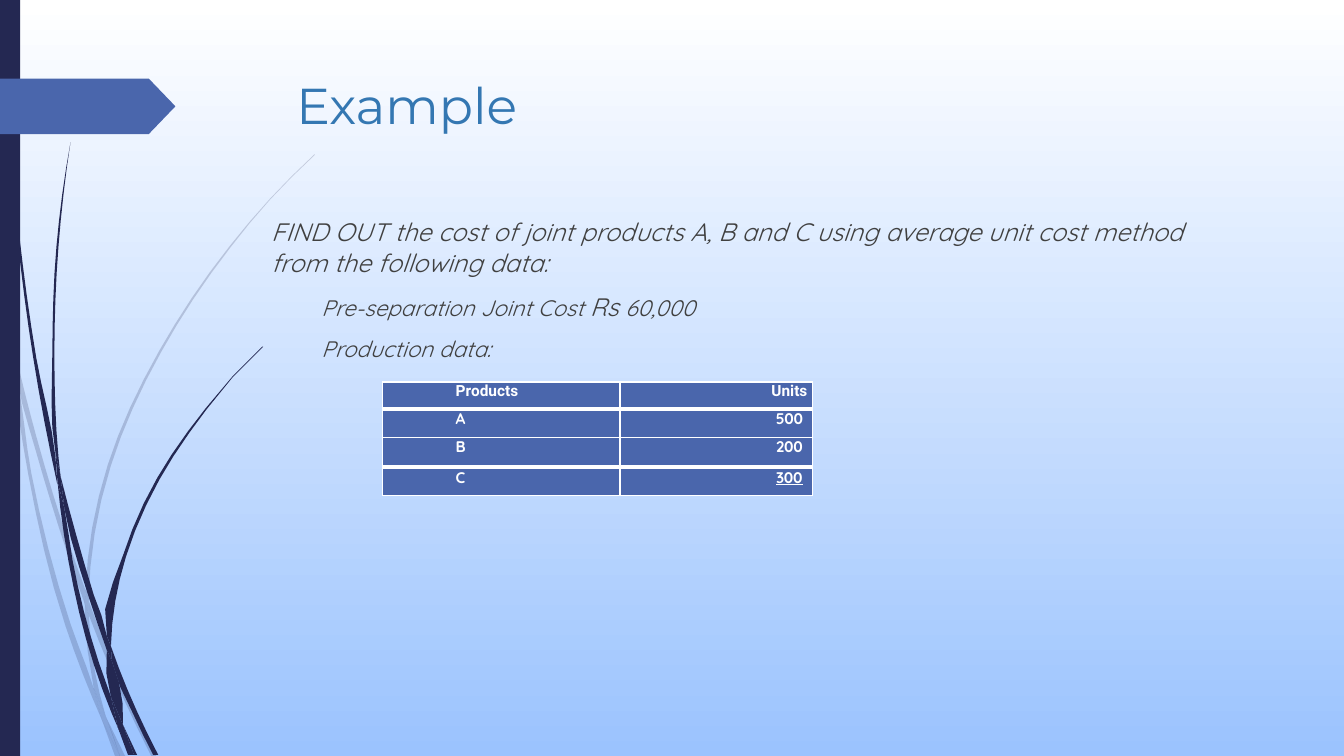
from dataclasses import dataclass

from pptx import Presentation
from pptx.dml.color import RGBColor
from pptx.enum.shapes import MSO_SHAPE as Preset
from pptx.enum.text import MSO_ANCHOR as Anchor, PP_ALIGN as Align
from pptx.oxml.ns import qn
from pptx.util import Inches, Pt
from lxml.etree import SubElement


@dataclass(frozen=True)
class Theme:
    navy: str = "242852"
    blue: str = "4A66AC"
    title_blue: str = "3477B2"
    text: str = "404040"
    white: str = "FFFFFF"
    sky: str = "9BC3FE"
    title_font: str = "Montserrat"
    body_font: str = "Quicksand"
    header_font: str = "Roboto"
    title_size: float = 36
    lead_size: float = 18
    detail_size: float = 16
    table_size: float = 11


THEME = Theme()

PALE_BLADES = [
    ([(0, 2.99), (0.11, 3.5)], [(0, 2.82), (0.09, 3.22), (0.11, 3.5)]),
    ([(0.14, 3.45), (0.17, 3.76), (0.36, 4.49), (0.58, 5.22), (0.84, 5.99)],
     [(0.14, 3.45), (0.36, 4.33), (0.62, 5.2), (0.85, 5.86)]),
    ([(0.88, 6.1), (1.23, 6.94), (1.5, 7.5)],
     [(0.88, 5.96), (0.92, 6.07), (1.27, 6.92), (1.55, 7.5)]),
    ([(1.05, 7.11), (1.19, 7.5)], [(1.05, 7.11), (1.24, 7.5)]),
    ([(0.11, 3.5), (0.28, 4.7), (0.65, 6.21), (0.92, 6.93), (1.01, 7.14)],
     [(0.11, 3.5), (0.17, 3.76), (0.31, 4.69), (0.7, 6.19), (0.93, 6.83), (1.01, 7.14)]),
    ([(0.84, 5.99), (0.87, 6.46), (0.93, 6.83), (1.05, 7.11)],
     [(0.84, 5.99), (0.88, 6.1), (0.91, 6.46), (1.05, 7.11)]),
    ([(3.12, 1.53), (2.68, 1.97), (2.28, 2.44), (1.58, 3.48), (1.07, 4.61), (0.85, 5.86)],
     [(3.12, 1.54), (2.68, 1.98), (2.29, 2.45), (1.6, 3.49), (1.1, 4.62), (0.88, 5.96)]),
    ([(1.01, 7.14), (1.14, 7.5)], [(1.01, 7.14), (1.19, 7.5)]),
    ([(0.85, 5.86), (0.84, 5.99), (0.88, 6.1)], [(0.85, 5.86), (0.88, 5.96), (0.88, 6.1)]),
    ([(0.93, 6.83), (1.01, 7.14), (1.19, 7.5)], [(0.93, 6.83), (1.05, 7.11), (1.19, 7.5)]),
]
DARK_BLADES = [
    ([(0.03, 0), (0.07, 1.1), (0.17, 2.33), (0.33, 3.55), (0.57, 4.81)],
     [(0.04, 0), (0.08, 1.09), (0.19, 2.32), (0.36, 3.55), (0.55, 4.53), (0.57, 4.81)]),
    ([(0.6, 4.72), (0.64, 5.05), (0.88, 5.92), (1.06, 6.45)],
     [(0.6, 4.72), (0.93, 5.9), (1.06, 6.31), (1.06, 6.45)]),
    ([(1.1, 6.41), (1.11, 6.56), (1.32, 7.08), (1.52, 7.49)],
     [(1.1, 6.41), (1.36, 7.06), (1.57, 7.49)]),
    ([(0.57, 4.77), (0.68, 5.57), (0.93, 6.59), (1.11, 7.08), (1.17, 7.22)],
     [(0.57, 4.77), (0.64, 5.05), (0.72, 5.56), (0.98, 6.57), (1.1, 6.91), (1.17, 7.22)]),
    ([(0.7, 1.41), (0.56, 2.45), (0.52, 3.49), (0.55, 4.49), (0.6, 4.72)],
     [(0.7, 1.41), (0.58, 2.45), (0.54, 3.49), (0.58, 4.53), (0.6, 4.72)]),
    ([(1.22, 7.19), (1.33, 7.49)], [(1.22, 7.19), (1.36, 7.49)]),
    ([(0.55, 4.49), (0.57, 4.77), (0.64, 5.05)], [(0.55, 4.49), (0.6, 4.72), (0.64, 5.05)]),
    ([(2.6, 3.44), (2.31, 3.73), (2.04, 4.05), (1.56, 4.74), (1.22, 5.51), (1.06, 6.31),
      (1.1, 6.41)],
     [(2.61, 3.44), (2.31, 3.74), (2.05, 4.06), (1.58, 4.76), (1.25, 5.52), (1.1, 6.41)]),
    ([(1.17, 7.22), (1.27, 7.49)], [(1.17, 7.22), (1.31, 7.49)]),
    ([(1.06, 6.45), (1.1, 6.91), (1.22, 7.19)], [(1.06, 6.45), (1.11, 6.56), (1.22, 7.19)]),
    ([(1.06, 6.31), (1.06, 6.45), (1.11, 6.56)], [(1.06, 6.31), (1.1, 6.41), (1.11, 6.56)]),
    ([(1.1, 6.91), (1.17, 7.22), (1.3, 7.49)], [(1.1, 6.91), (1.22, 7.19), (1.33, 7.49)]),
]
PRODUCTION = [("Products", "Units"), ("A", "500"), ("B", "200"), ("C", "300")]
COLUMN_WIDTHS = (2.36, 1.91)
ROW_HEIGHTS = (0.27, 0.28, 0.29, 0.29)
RULE_WIDTHS = (1, 3, 1, 3, 1)


def color(code):
    return RGBColor.from_string(code)


def paint_background(page):
    fill = page.background.fill
    fill.gradient()
    fill.gradient_angle = 270
    for stop, code, position in zip(fill.gradient_stops, (THEME.white, THEME.sky), (0, 1)):
        stop.color.rgb = color(code)
        stop.position = position


def paint(shape, code, opacity=100):
    shape.shadow.inherit = False
    shape.fill.solid()
    shape.fill.fore_color.rgb = color(code)
    shape.line.fill.background()
    if opacity < 100:
        tone = shape._element.spPr.find(qn("a:solidFill")).find(qn("a:srgbClr"))
        SubElement(tone, qn("a:alpha"), val=str(opacity * 1000))


def smooth(edge):
    pairs = list(zip(edge, edge[1:]))
    heights = [b[1] - a[1] for a, b in pairs]
    chords = [(b[0] - a[0]) / h for (a, b), h in zip(pairs, heights)]
    inner = [(c0 * h1 + c1 * h0) / (h0 + h1) for c0, c1, h0, h1
             in zip(chords, chords[1:], heights, heights[1:])] or chords
    slopes = [2 * chords[0] - inner[0], *inner, 2 * chords[-1] - inner[-1]]
    if len(edge) == 2:
        slopes = chords * 2
    points = [edge[0]]
    for i, ((x0, y0), (x1, _)) in enumerate(pairs):
        steps = max(1, min(4, round(heights[i] / 0.25)))
        for t in (step / steps for step in range(1, steps + 1)):
            x = (x0 + (x1 - x0) * t * t * (3 - 2 * t)
                 + heights[i] * t * (1 - t) * (slopes[i] * (1 - t) - slopes[i + 1] * t))
            points.append((x, y0 + heights[i] * t))
    return points


def add_blade(page, left_edge, right_edge, opacity):
    outline = smooth(left_edge) + smooth(right_edge)[::-1]
    corners = [(Inches(x), Inches(y)) for x, y in outline]
    builder = page.shapes.build_freeform(*corners[0], scale=1.0)
    builder.add_line_segments(corners[1:], close=True)
    paint(builder.convert_to_shape(), THEME.navy, opacity)


def add_block(page, preset, left, top, width, height, code):
    block = page.shapes.add_shape(
        preset, Inches(left), Inches(top), Inches(width), Inches(height))
    paint(block, code)
    return block


def add_text_frame(page, left, top, width, height):
    box = page.shapes.add_textbox(Inches(left), Inches(top), Inches(width), Inches(height))
    box.text_frame.word_wrap = True
    return box.text_frame


def add_run(para, text, font, size, code, **styles):
    span = para.add_run()
    span.text = text
    span.font.name = font
    span.font.size = Pt(size)
    span.font.color.rgb = color(code)
    for style, value in styles.items():
        setattr(span.font, style, value)
    return span


def indent(para, left):
    para._p.get_or_add_pPr().set("marL", str(Inches(left)))


def add_question(page):
    frame = add_text_frame(page, 2.59, 2.1, 9.75, 4.13)
    lead, detail = THEME.lead_size, THEME.detail_size
    lines = [
        (0, [("FIND OUT the cost of joint products A, B and C using average "
              "unit cost method from the following data:", lead)]),
        (0.5, [("Pre-separation Joint Cost ", detail), ("Rs ", lead), ("60,000", detail)]),
        (0.5, [("Production data:", detail)]),
    ]
    for number, (left, spans) in enumerate(lines):
        para = frame.add_paragraph() if number else frame.paragraphs[0]
        para.space_before = Pt(10)
        indent(para, left)
        for text, size in spans:
            add_run(para, text, THEME.body_font, size, THEME.text, italic=True)


def add_borders(cell, row):
    widths = {"L": 1, "R": 1, "T": RULE_WIDTHS[row], "B": RULE_WIDTHS[row + 1]}
    for side, width in widths.items():
        line = SubElement(cell._tc.get_or_add_tcPr(), qn(f"a:ln{side}"), w=str(Pt(width)))
        SubElement(SubElement(line, qn("a:solidFill")), qn("a:srgbClr"), val=THEME.white)


def fill_cell(cell, row, column, text):
    cell.margin_left = cell.margin_right = cell.margin_top = cell.margin_bottom = 0
    cell.vertical_anchor = Anchor.TOP
    add_borders(cell, row)
    cell.fill.solid()
    cell.fill.fore_color.rgb = color(THEME.blue)
    para = cell.text_frame.paragraphs[0]
    para.alignment = (Align.LEFT, Align.CENTER)[column]
    para.space_before = Pt(0.1 if row < 2 else 1.1)
    indent(para, (0.73, 1.45)[column])
    is_last = row == len(PRODUCTION) - 1
    if is_last:
        para.line_spacing = Pt(14.6)
    font = THEME.body_font if row else THEME.header_font
    span = add_run(para, text, font, THEME.table_size, THEME.white,
                   bold=True, underline=is_last and column == 1)
    if row:
        span.font._element.set("spc", ("-50", "-20")[column])


def add_production_table(page):
    table = page.shapes.add_table(
        len(PRODUCTION), len(COLUMN_WIDTHS), Inches(3.79), Inches(3.79),
        Inches(sum(COLUMN_WIDTHS)), Inches(sum(ROW_HEIGHTS))).table
    table.first_row = table.horz_banding = False
    for column, width in zip(table.columns, COLUMN_WIDTHS):
        column.width = Inches(width)
    for row, (height, texts) in enumerate(zip(ROW_HEIGHTS, PRODUCTION)):
        table.rows[row].height = Inches(height)
        for column, text in enumerate(texts):
            fill_cell(table.cell(row, column), row, column, text)


def main():
    deck = Presentation()
    deck.slide_width, deck.slide_height = Inches(13.33), Inches(7.5)
    page = deck.slides.add_slide(deck.slide_layouts[6])
    paint_background(page)
    for blades, opacity in ((PALE_BLADES, 20), (DARK_BLADES, 100)):
        for left_edge, right_edge in blades:
            add_blade(page, left_edge, right_edge, opacity)
    add_block(page, Preset.RECTANGLE, 0, 0, 0.2, 7.5, THEME.navy)
    ribbon = add_block(page, Preset.PENTAGON, 0, 0.78, 1.74, 0.55, THEME.blue)
    ribbon.adjustments[0] = 0.48
    title = add_text_frame(page, 2.84, 0.69, 4.81, 0.88).paragraphs[0]
    add_run(title, "Example", THEME.title_font, THEME.title_size, THEME.title_blue)
    add_question(page)
    add_production_table(page)
    deck.save("out.pptx")


if __name__ == "__main__":
    main()
